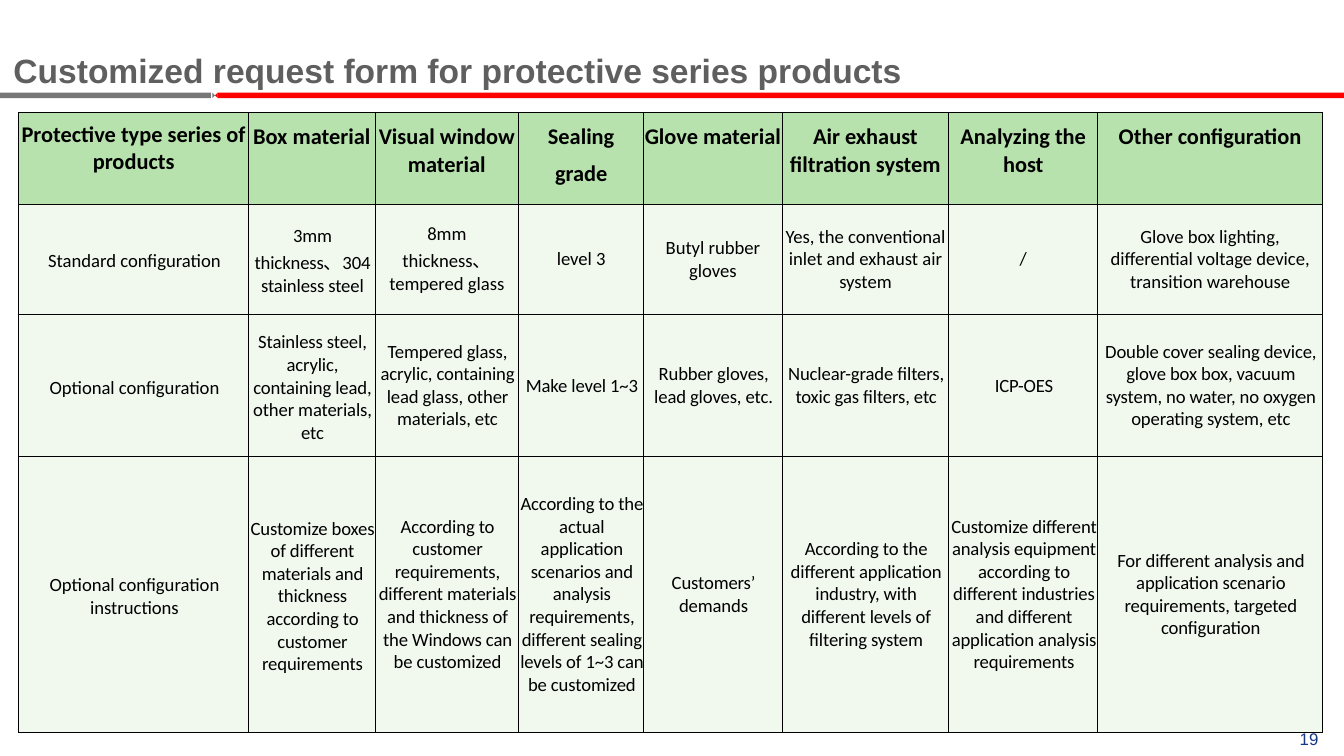
import pptx
import pptx.util
import pptx.dml.color
import pptx.enum.shapes
import pptx.enum.text
import pptx.oxml
import pptx.oxml.ns

Inches = pptx.util.Inches
Pt = pptx.util.Pt
kinds = pptx.enum.shapes.MSO_SHAPE
aligns = pptx.enum.text.PP_ALIGN
anchors = pptx.enum.text.MSO_ANCHOR

colors = {
    "gray": "777777", "red": "FF0000", "title": "5F5F5F", "page": "183884",
    "head": "B8E2AD", "body": "F1F9EF", "black": "000000",
}


def tint(name):
    return pptx.dml.color.RGBColor.from_string(colors[name])


def write(para, text, font, size, color, bold=False):
    run = para.add_run()
    run.text = text
    run.font.name = font
    run.font.size = Pt(size)
    run.font.bold = bold
    run.font.color.rgb = tint(color)
    return run


# Widescreen 16:9 slide
deck = pptx.Presentation()
deck.slide_width = Inches(10)
deck.slide_height = Inches(10 * 9 / 16)
slide = deck.slides.add_slide(deck.slide_layouts[6])

# Two-colour rule under the title
parts = [
    (kinds.RECTANGLE, 0, 0.69, 1.57, 0.04, 0, "gray"),
    (kinds.ISOSCELES_TRIANGLE, 1.57, 0.7, 0.04, 0.02, 90, "gray"),
    (kinds.RECTANGLE, 1.62, 0.69, 8.38, 0.04, 0, "red"),
    (kinds.ISOSCELES_TRIANGLE, 1.59, 0.7, 0.04, 0.02, 270, "red"),
]
for kind, left, top, width, height, turn, color in parts:
    shape = slide.shapes.add_shape(
        kind, Inches(left), Inches(top), Inches(width), Inches(height))
    shape.rotation = turn
    shape.shadow.inherit = False
    shape.fill.solid()
    shape.fill.fore_color.rgb = tint(color)
    shape.line.fill.background()

# Page number
box = slide.shapes.add_textbox(Inches(9.49), Inches(5.37), Inches(0.5), Inches(0.25))
box.text_frame.word_wrap = True
para = box.text_frame.paragraphs[0]
para.alignment = aligns.CENTER
write(para, "19", "Arial", 9, "page")

# Title
box = slide.shapes.add_textbox(Inches(0.1), Inches(0.21), Inches(8.62), Inches(0.63))
frame = box.text_frame
frame.word_wrap = True
frame.vertical_anchor = anchors.MIDDLE
frame.margin_left = frame.margin_top = frame.margin_bottom = 0
frame.margin_right = Inches(0.06)
write(frame.paragraphs[0], "Customized request form for protective series products",
      "Arial", 18, "title", True)

# Table content, a new line starts a new paragraph
rows = [
    ["Protective type series of products", "Box material",
     "Visual window material", "Sealing\ngrade", "Glove material",
     "Air exhaust filtration system", "Analyzing the host",
     "Other configuration"],
    ["Standard configuration", "3mm thickness、304 stainless steel",
     "8mm\nthickness、tempered glass", "level 3", "Butyl rubber gloves",
     "Yes, the conventional inlet and exhaust air system", "/",
     "Glove box lighting, differential voltage device, transition warehouse"],
    ["Optional configuration",
     "Stainless steel, acrylic, containing lead, other materials, etc",
     "Tempered glass, acrylic, containing lead glass, other materials, etc",
     "Make level 1~3", "Rubber gloves, lead gloves, etc.",
     "Nuclear-grade filters, toxic gas filters, etc", "ICP-OES",
     "Double cover sealing device, glove box box, vacuum system, "
     "no water, no oxygen operating system, etc"],
    ["Optional configuration instructions",
     "Customize boxes of different materials and thickness "
     "according to customer requirements",
     "According to customer requirements, different materials and "
     "thickness of the Windows can be customized",
     "According to the actual application scenarios and analysis "
     "requirements, different sealing levels of 1~3 can be customized",
     "Customers’ demands",
     "According to the different application industry, with different "
     "levels of filtering system",
     "Customize different analysis equipment according to different "
     "industries and different application analysis requirements",
     "For different analysis and application scenario requirements, "
     "targeted configuration"],
]
widths = [1.71, 0.94, 1.07, 0.93, 1.03, 1.24, 1.11, 1.67]
heights = [0.68, 0.82, 1.06, 2.05]

# Table grid
table = slide.shapes.add_table(
    len(rows), len(widths), Inches(0.14), Inches(0.84),
    Inches(sum(widths)), Inches(sum(heights))).table
for col, width in zip(table.columns, widths):
    col.width = Inches(width)
for row, height in zip(table.rows, heights):
    row.height = Inches(height)

# Table cells
for r, texts in enumerate(rows):
    head = r == 0
    for c, text in enumerate(texts):
        cell = table.cell(r, c)
        cell.fill.solid()
        cell.fill.fore_color.rgb = tint("head" if head else "body")
        cell.margin_left = cell.margin_right = cell.margin_bottom = 0
        if head:
            top = 0.06 if c == 0 else 0.08
        else:
            top = 0.03 if c < 2 else 0
        cell.margin_top = Inches(top)
        cell.vertical_anchor = anchors.TOP if head else anchors.MIDDLE

        # Body text is indented a touch, and set tighter past the first column
        inset = r > 1 or r == 1 and c < 2
        tight = inset and c > 0
        frame = cell.text_frame
        for i, line in enumerate(text.split("\n")):
            para = frame.paragraphs[0] if i == 0 else frame.add_paragraph()
            para.alignment = aligns.CENTER
            if inset:
                para._p.get_or_add_pPr().set("marL", str(Inches(0.01)))
            if head and i:
                para.space_before = Pt(5)
            run = write(para, line, "Calibri", 12 if head else 10, "black", head)
            if tight:
                run.font._element.set("spc", "-5")

        # Thin black borders go ahead of the fill
        props = cell._tc.get_or_add_tcPr()
        for n, side in enumerate(["lnL", "lnR", "lnT", "lnB"]):
            edge = pptx.oxml.parse_xml(
                f'<a:{side} {pptx.oxml.ns.nsdecls("a")} w="{Pt(0.5)}"><a:solidFill>'
                f'<a:srgbClr val="{colors["black"]}"/></a:solidFill></a:{side}>')
            props.insert(n, edge)

deck.save("out.pptx")
